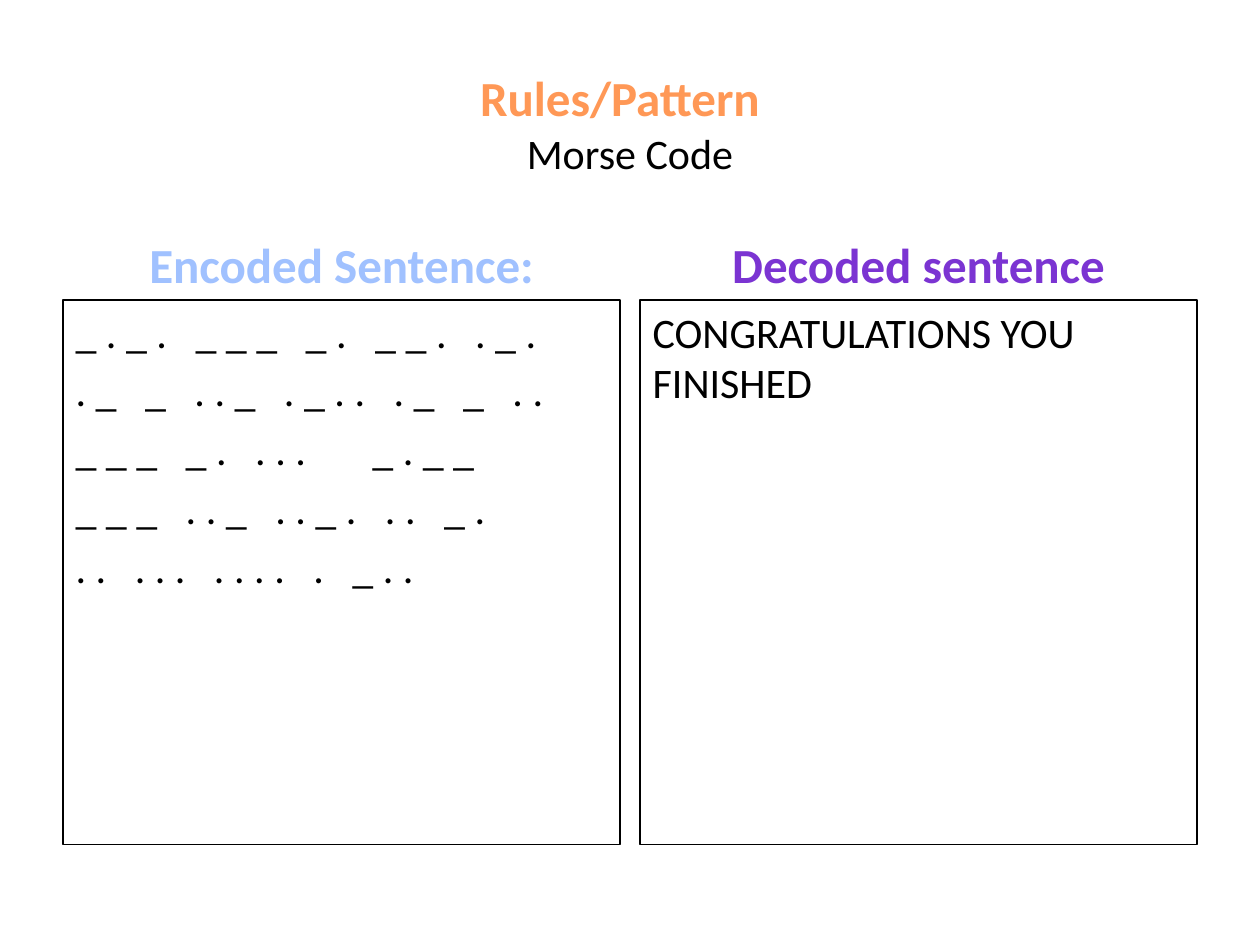
from lxml.etree import SubElement
from pptx import Presentation
from pptx.dml.color import RGBColor
from pptx.enum.text import MSO_ANCHOR, MSO_AUTO_SIZE, PP_ALIGN
from pptx.oxml.ns import qn
from pptx.util import Inches, Pt

FONT = "Calibri"
COLORS = {"text": "000000", "rules": "FF9856", "encoded": "A0C1FF", "decoded": "7B34D2"}
TWO_CONTENT = 3
HEADING_HEIGHT = 0.57

MORSE = [
    "_ . _ .   _ _ _   _ .   _ _ .   . _ .",
    ". _   _   . . _   . _ . .   . _   _   . .",
    "_ _ _   _ .   . . .       _ . _ _",
    "_ _ _   . . _   . . _ .   . .   _ .",
    ". .   . . .   . . . .   .   _ . .",
]


def place(shape, box):
    shape.left, shape.top, shape.width, shape.height = map(Inches, box)


def style(para, size, color, bold=False):
    for span in para.runs:
        span.font.name = FONT
        span.font.size = Pt(size)
        span.font.bold = bold
        span.font.color.rgb = RGBColor.from_string(COLORS[color])


def add_heading(page, box, text, color):
    heading = page.shapes.add_textbox(*map(Inches, box))
    frame = heading.text_frame
    frame.word_wrap = False
    frame.auto_size = MSO_AUTO_SIZE.SHAPE_TO_FIT_TEXT
    frame.text = text
    para = frame.paragraphs[0]
    para.alignment = PP_ALIGN.CENTER
    style(para, 28, color, bold=True)


def fill_title(page, box, text):
    title = page.shapes.title
    place(title, box)
    frame = title.text_frame
    frame.auto_size = MSO_AUTO_SIZE.NONE
    # The bottom inset leaves the upper half of the box to the heading
    frame.vertical_anchor = MSO_ANCHOR.BOTTOM
    frame.margin_bottom = Inches(0.27)
    frame.text = text
    frame.paragraphs[0].alignment = PP_ALIGN.CENTER
    style(frame.paragraphs[0], 24, "text")


def fill_panel(page, panel, box, heading, heading_width, color, lines):
    left, top, width, height = box
    place(panel, box)
    panel.line.color.rgb = RGBColor.from_string(COLORS["text"])
    panel.line.width = Pt(0.75)
    frame = panel.text_frame
    frame.auto_size = MSO_AUTO_SIZE.NONE
    frame.text = "\n".join(lines)
    for para in frame.paragraphs:
        style(para, 24, "text")
        # Plain lines without bullet or hanging indent
        properties = para._p.get_or_add_pPr()
        properties.set("marL", "0")
        properties.set("indent", "0")
        SubElement(properties, qn("a:buNone"))
    heading_left = left + (width - heading_width) / 2
    add_heading(page, (heading_left, top - HEADING_HEIGHT, heading_width, HEADING_HEIGHT),
                heading, color)


def main():
    deck = Presentation()
    deck.slide_width, deck.slide_height = Inches(10), Inches(7.5)
    page = deck.slides.add_slide(deck.slide_layouts[TWO_CONTENT])

    # Rule at the top
    fill_title(page, (0.5, 0.3, 9, 1.38), "Morse Code")
    add_heading(page, (3.69, 0.49, 2.46, HEADING_HEIGHT), "Rules/Pattern", "rules")

    # Encoded and decoded panels
    fill_panel(page, page.placeholders[1], (0.5, 2.38, 4.42, 4.32),
               "Encoded Sentence:", 3.3, "encoded", MORSE)
    fill_panel(page, page.placeholders[2], (5.08, 2.38, 4.42, 4.32),
               "Decoded sentence", 3.2, "decoded", ["CONGRATULATIONS YOU FINISHED"])

    deck.save("out.pptx")


if __name__ == "__main__":
    main()
